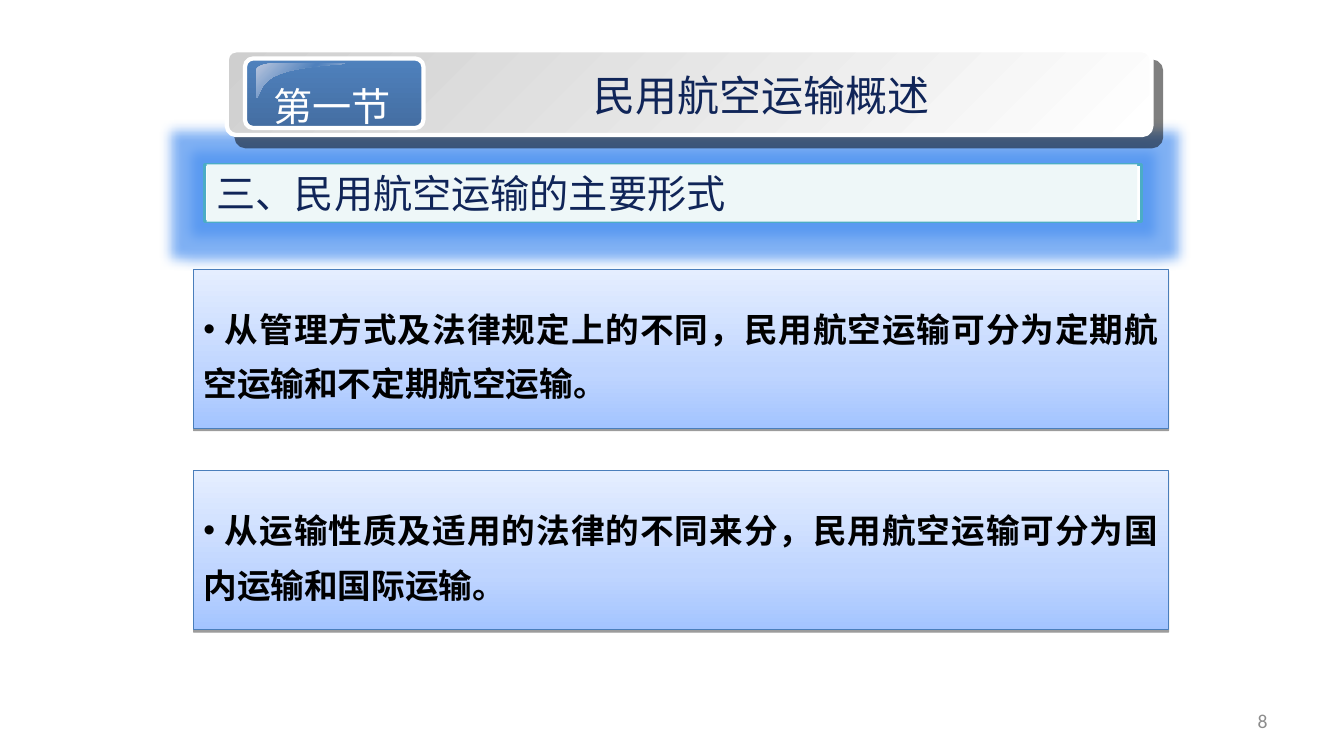
from lxml import etree
from pptx import Presentation, util as u
from pptx.dml.color import RGBColor
from pptx.enum import shapes, text
from pptx.oxml import parse_xml
from pptx.oxml.ns import nsdecls, qn

SLIDE_W, SLIDE_H = 13.33, 7.5
CJK = "Noto Sans CJK SC"
NAVY, WHITE, BLACK, BLUE = "102558", "FFFFFF", "000000", "4F81BD"
ALIGN, ANCHOR = text.PP_ALIGN, text.MSO_ANCHOR
SHAPE = shapes.MSO_SHAPE


def color(value):
    return RGBColor.from_string(value)


def inches(*lengths):
    return [u.Inches(length) for length in lengths]


def gradient(shape, stops, angle):
    """Linear gradient; the angle runs clockwise from left to right."""
    shape.fill.background()
    marks = "".join(f'<a:gs pos="{at * 1000}"><a:srgbClr val="{value}"/></a:gs>'
                    for at, value in stops)
    fill = parse_xml(f'<a:gradFill {nsdecls("a")} rotWithShape="1"><a:gsLst>{marks}'
                     f'</a:gsLst><a:lin ang="{angle * 60000}" scaled="0"/></a:gradFill>')
    properties = shape._element.spPr
    properties.replace(properties.find(qn("a:noFill")), fill)


def effect(tag, value, alpha, **attributes):
    listed = " ".join(f'{name}="{int(number)}"' for name, number in attributes.items())
    return parse_xml(f'<a:effectLst {nsdecls("a")}><a:{tag} {listed}><a:srgbClr val="{value}">'
                     f'<a:alpha val="{alpha * 1000}"/></a:srgbClr></a:{tag}></a:effectLst>')


def drop_shadow(alpha, distance, angle):
    return effect("outerShdw", BLACK, alpha, blurRad=0, dist=u.Pt(distance), dir=angle * 60000)


def style(shape, fill=None, stops=None, angle=0, line=None, width=1, glow=None):
    """Fill, outline and effect of a shape."""
    if stops:
        gradient(shape, stops, angle)
    else:
        shape.fill.solid()
        shape.fill.fore_color.rgb = color(fill)
    if line:
        shape.line.color.rgb = color(line)
        shape.line.width = u.Pt(width)
    else:
        shape.line.fill.background()
    shape.shadow.inherit = False
    if glow is not None:
        properties = shape._element.spPr
        properties.replace(properties.find(qn("a:effectLst")), glow)


def block(slide, box, kind=SHAPE.RECTANGLE, corner=None, **look):
    shape = slide.shapes.add_shape(kind, *inches(*box))
    if corner:
        shape.adjustments[0] = corner
    style(shape, **look)
    return shape


def write(shape, words, size, ink, font="Arial", bold=False, align=ALIGN.LEFT,
          anchor=ANCHOR.TOP, wrap=True, spacing=None, before=None, bullet=None, shadow=None):
    frame = shape.text_frame
    frame.word_wrap, frame.vertical_anchor = wrap, anchor
    paragraph = frame.paragraphs[0]
    paragraph.alignment = align
    if spacing:
        paragraph.line_spacing = spacing
    if before:
        paragraph.space_before = u.Pt(before)
    if bullet:
        properties = paragraph._p.get_or_add_pPr()
        etree.SubElement(properties, qn("a:buFont")).set("typeface", "Arial")
        etree.SubElement(properties, qn("a:buChar")).set("char", bullet)
    run = paragraph.add_run()
    run.text = words
    run.font.size, run.font.bold, run.font.name = u.Pt(size), bold, font
    run.font.color.rgb = color(ink)
    latin = run._r.rPr.find(qn("a:latin"))
    east_asian = etree.Element(qn("a:ea"))
    east_asian.set("typeface", CJK)
    latin.addnext(east_asian)
    if shadow is not None:
        latin.addprevious(shadow)


def label(slide, box, words, **form):
    write(slide.shapes.add_textbox(*inches(*box)), words, **form)


def badge_gloss(slide, left, top, width, height):
    """Curved highlight in the badge's upper left corner."""
    def bezier(a, b, c, d, steps=8):
        for step in range(1, steps + 1):
            t = step / steps
            yield tuple((1 - t) ** 3 * p + 3 * t * (1 - t) ** 2 * q + 3 * t * t * (1 - t) * r
                        + t ** 3 * s for p, q, r, s in zip(a, b, c, d))

    start, shoulder, foot = (0.2, 0), (0, 0.2), (0, 1)
    bend, tip = (0.27, 0.3), (1, 0)
    outline = [*bezier(start, (0.09, 0), (0, 0.09), shoulder), foot,
               *bezier(foot, (0.05, 1), (0.02, 0.53), bend),
               *bezier(bend, (0.52, 0.06), (1, 0.03), tip)]
    points = [inches(left + x * width, top + y * height) for x, y in outline]
    builder = slide.shapes.build_freeform(*inches(left + start[0] * width, top), scale=1.0)
    builder.add_line_segments(points, close=True)
    style(builder.convert_to_shape(), stops=[(0, "BBC7DE"), (50, BLUE), (100, "BBC7DE")], angle=45)


def title_banner(slide, left, top, width, height):
    block(slide, (left, top, width, height), SHAPE.ROUNDED_RECTANGLE, corner=0.109,
          stops=[(0, "CFCFCF"), (100, WHITE)], angle=45, line=WHITE, width=3,
          glow=drop_shadow(50, 10.6, 49))
    # Section badge
    block(slide, (left + 0.18, top + 0.08, 1.77, 0.69), SHAPE.ROUNDED_RECTANGLE, corner=0.119,
          stops=[(0, BLUE), (100, "446EA2")], angle=90, line=WHITE, width=3)
    badge_gloss(slide, left + 0.29, top + 0.13, 0.88, 0.34)
    label(slide, (left + 0.36, top + 0.27, 1.37, 0.57), "第一节 ", size=28, ink=WHITE,
          align=ALIGN.CENTER, wrap=False, shadow=drop_shadow(100, 2, 45))
    # Chapter title
    label(slide, (left + 1.98, top + 0.14, 6.74, 0.6), "民用航空运输概述 ", size=30, ink=NAVY,
          align=ALIGN.CENTER)


def section_heading(slide, left, top, width, height):
    block(slide, (left, top, width, height), fill=WHITE, line="4BACC6", width=2,
          glow=effect("glow", "4A90F0", 70, rad=u.Pt(17)))
    heading = block(slide, (left + 0.02, top, width - 0.06, height), fill="EEF7F8")
    write(heading, "三、民用航空运输的主要形式", size=28, ink=NAVY)


def statement(slide, left, top, width, height, words):
    panel = block(slide, (left, top, width, height),
                  stops=[(0, "A3C4FF"), (35, "BFD5FF"), (100, "E5EEFF")], angle=270,
                  line="4A7EBB", width=0.75, glow=drop_shadow(38, 1.6, 90))
    write(panel, " " + words, size=24, ink=BLACK, font=CJK, bold=True, align=ALIGN.JUSTIFY,
          anchor=ANCHOR.MIDDLE, spacing=1.35, before=13, bullet="•")


def main():
    deck = Presentation()
    deck.slide_width, deck.slide_height = inches(SLIDE_W, SLIDE_H)
    slide = deck.slides.add_slide(deck.slide_layouts[6])

    section_heading(slide, 2.03, 1.63, 9.29, 0.57)
    title_banner(slide, 2.25, 0.5, 9.17, 0.84)

    # Ways of dividing air transport
    divisions = ["从管理方式及法律规定上的不同，民用航空运输可分为定期航空运输和不定期航空运输。",
                 "从运输性质及适用的法律的不同来分，民用航空运输可分为国内运输和国际运输。"]
    for row, words in enumerate(divisions):
        statement(slide, 1.92, 2.67 + 2 * row, 9.67, 1.58, words)

    # Page number
    label(slide, (9.56, 6.95, 3.11, 0.4), "8", size=14, ink="8C8C8C", font="Calibri",
          align=ALIGN.RIGHT, anchor=ANCHOR.MIDDLE)
    deck.save("out.pptx")


if __name__ == "__main__":
    main()
